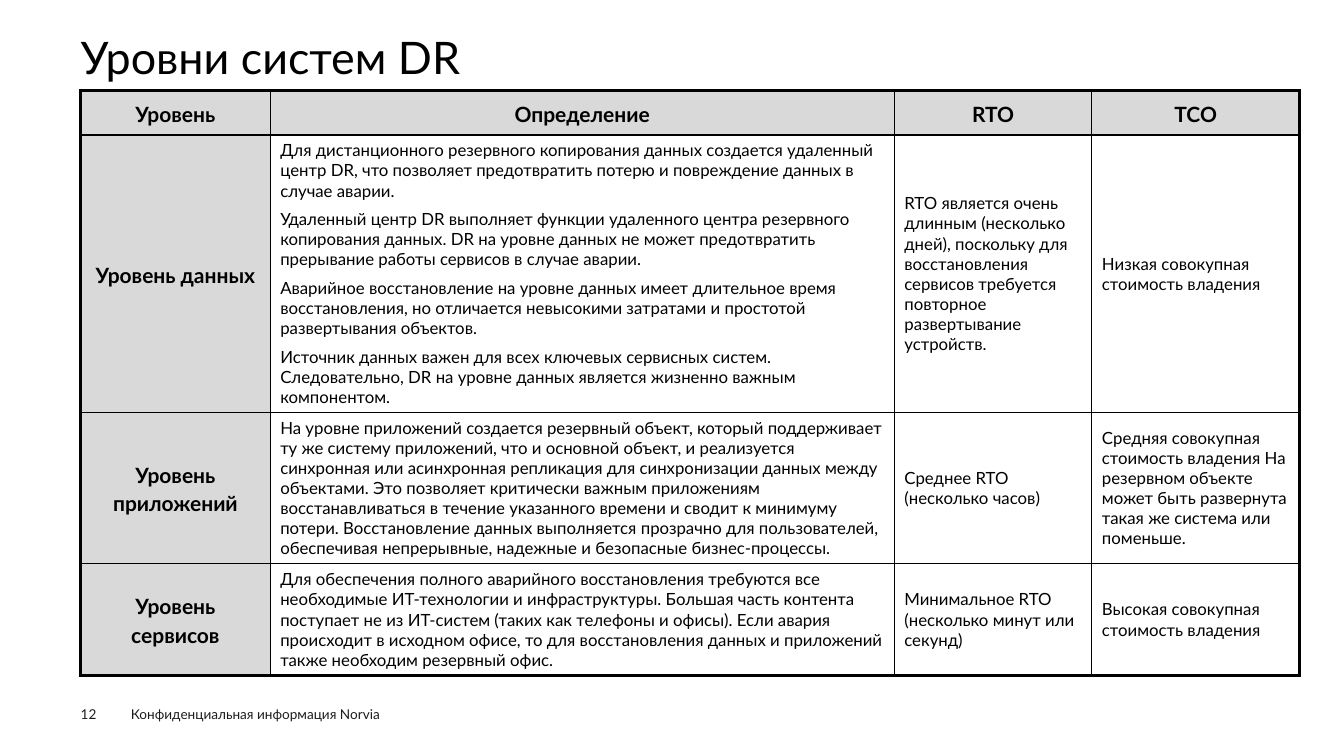
from dataclasses import dataclass

import pptx
import pptx.dml.color
import pptx.enum.text
import pptx.oxml
import pptx.oxml.ns
import pptx.util
from pptx.util import Inches


@dataclass(frozen=True)
class Theme:
    font: str = "Lato"
    black: str = "000000"
    footer_color: str = "1D1D1B"
    header_fill: str = "D9D9D9"
    title_size: float = 32
    heading_size: float = 15
    body_size: float = 12
    footer_size: float = 9.7
    heading_leading: float = 20.4
    outer_border: float = 2.25
    inner_border: float = 1


THEME = Theme()
COLUMN_WIDTHS = (1.88, 6.19, 1.96, 2.06)
ROW_HEIGHTS = (0.44, 2.75, 1.5, 1.11)
# Each cell is a list of paragraphs.
LEVELS = [
    [["Уровень"], ["Определение"], ["RTO"], ["TCO"]],
    [
        ["Уровень данных"],
        [
            "Для дистанционного резервного копирования данных создается удаленный центр DR, "
            "что позволяет предотвратить потерю и повреждение данных в случае аварии.",
            "Удаленный центр DR выполняет функции удаленного центра резервного копирования "
            "данных. DR на уровне данных не может предотвратить прерывание работы сервисов "
            "в случае аварии.",
            "Аварийное восстановление на уровне данных имеет длительное время восстановления, "
            "но отличается невысокими затратами и простотой развертывания объектов.",
            "Источник данных важен для всех ключевых сервисных систем. Следовательно, DR на "
            "уровне данных является жизненно важным компонентом.",
        ],
        ["RTO является очень длинным (несколько дней), поскольку для восстановления сервисов "
         "требуется повторное развертывание устройств."],
        ["Низкая совокупная стоимость владения"],
    ],
    [
        ["Уровень приложений"],
        ["На уровне приложений создается резервный объект, который поддерживает ту же систему "
         "приложений, что и основной объект, и реализуется синхронная или асинхронная "
         "репликация для синхронизации данных между объектами. Это позволяет критически важным "
         "приложениям восстанавливаться в течение указанного времени и сводит к минимуму "
         "потери. Восстановление данных выполняется прозрачно для пользователей, обеспечивая "
         "непрерывные, надежные и безопасные бизнес-процессы."],
        ["Среднее RTO (несколько часов)"],
        ["Средняя совокупная стоимость владения На резервном объекте может быть развернута "
         "такая же система или поменьше."],
    ],
    [
        ["Уровень сервисов"],
        ["Для обеспечения полного аварийного восстановления требуются все необходимые "
         "ИТ-технологии и инфраструктуры. Большая часть контента поступает не из ИТ-систем "
         "(таких как телефоны и офисы). Если авария происходит в исходном офисе, то для "
         "восстановления данных и приложений также необходим резервный офис."],
        ["Минимальное RTO (несколько минут или секунд)"],
        ["Высокая совокупная стоимость владения"],
    ],
]


def style_font(paragraph, size, color=THEME.black, bold=False):
    font = paragraph.font
    font.name = THEME.font
    font.size = pptx.util.Pt(size)
    font.bold = bold
    font.color.rgb = pptx.dml.color.RGBColor.from_string(color)


def clear_margins(frame):
    frame.margin_left = frame.margin_right = frame.margin_top = frame.margin_bottom = 0


def add_title(slide, left, top, width, height, text):
    title = slide.shapes.title
    title.left, title.top = Inches(left), Inches(top)
    title.width, title.height = Inches(width), Inches(height)
    frame = title.text_frame
    frame.text = text
    frame.auto_size = pptx.enum.text.MSO_AUTO_SIZE.NONE
    frame.vertical_anchor = pptx.enum.text.MSO_ANCHOR.TOP
    clear_margins(frame)
    paragraph = frame.paragraphs[0]
    paragraph.alignment = pptx.enum.text.PP_ALIGN.LEFT
    paragraph.line_spacing = 0.9
    style_font(paragraph, THEME.title_size)


def set_borders(cell, widths):
    """Draw the cell's edges; widths maps L, R, T and B, in that order, to points."""
    properties = cell._tc.get_or_add_tcPr()
    for position, (side, width) in enumerate(widths.items()):
        line = pptx.oxml.parse_xml(
            f'<a:ln{side} {pptx.oxml.ns.nsdecls("a")} w="{pptx.util.Pt(width)}">'
            f'<a:solidFill><a:srgbClr val="{THEME.black}"/></a:solidFill></a:ln{side}>'
        )
        properties.insert(position, line)


def fill_cell(cell, texts, heading, space_after):
    cell.vertical_anchor = pptx.enum.text.MSO_ANCHOR.MIDDLE
    if heading:
        cell.fill.solid()
        cell.fill.fore_color.rgb = pptx.dml.color.RGBColor.from_string(THEME.header_fill)
    else:
        cell.fill.background()
    cell.text_frame.text = "\n".join(texts)
    for paragraph in cell.text_frame.paragraphs:
        paragraph.space_after = pptx.util.Pt(space_after)
        if heading:
            paragraph.alignment = pptx.enum.text.PP_ALIGN.CENTER
            paragraph.line_spacing = pptx.util.Pt(THEME.heading_leading)
        style_font(paragraph, THEME.heading_size if heading else THEME.body_size, bold=heading)


def add_levels_table(slide, left, top):
    last_row, last_column = len(ROW_HEIGHTS) - 1, len(COLUMN_WIDTHS) - 1
    table = slide.shapes.add_table(
        len(ROW_HEIGHTS), len(COLUMN_WIDTHS), Inches(left), Inches(top),
        Inches(sum(COLUMN_WIDTHS)), Inches(sum(ROW_HEIGHTS)),
    ).table
    table.horz_banding = False
    for column, width in zip(table.columns, COLUMN_WIDTHS):
        column.width = Inches(width)
    for row, height in zip(table.rows, ROW_HEIGHTS):
        row.height = Inches(height)
    for row, level in enumerate(LEVELS):
        for column, texts in enumerate(level):
            cell = table.cell(row, column)
            heading = row == 0 or column == 0
            if heading:
                space_after = 3.8 if row < 2 else 0
            else:
                space_after = 6 if len(texts) > 1 else 0
            fill_cell(cell, texts, heading, space_after)
            outer = {"L": column == 0, "R": column == last_column,
                     "T": row == 0, "B": row == last_row}
            set_borders(cell, {
                side: THEME.outer_border if is_outer else THEME.inner_border
                for side, is_outer in outer.items()
            })


def add_footer(slide, left, top):
    number = slide.shapes.add_textbox(Inches(left), Inches(top + 0.05), Inches(0.55), Inches(0.16))
    clear_margins(number.text_frame)
    notice = slide.shapes.add_textbox(Inches(left + 0.4), Inches(top), Inches(3.03), Inches(0.26))
    for shape, text in ((number, "12"), (notice, "Конфиденциальная информация Norvia")):
        shape.text_frame.word_wrap = True
        shape.text_frame.text = text
        style_font(shape.text_frame.paragraphs[0], THEME.footer_size, THEME.footer_color)


def main():
    presentation = pptx.Presentation()
    presentation.slide_width, presentation.slide_height = Inches(13.33), Inches(7.5)
    slide = presentation.slides.add_slide(presentation.slide_layouts.get_by_name("Title Only"))
    add_title(slide, 0.8, 0.35, 11.73, 0.54, "Уровни систем DR")
    add_levels_table(slide, 0.8, 0.9)
    add_footer(slide, 0.8, 6.95)
    presentation.save("out.pptx")


if __name__ == "__main__":
    main()
